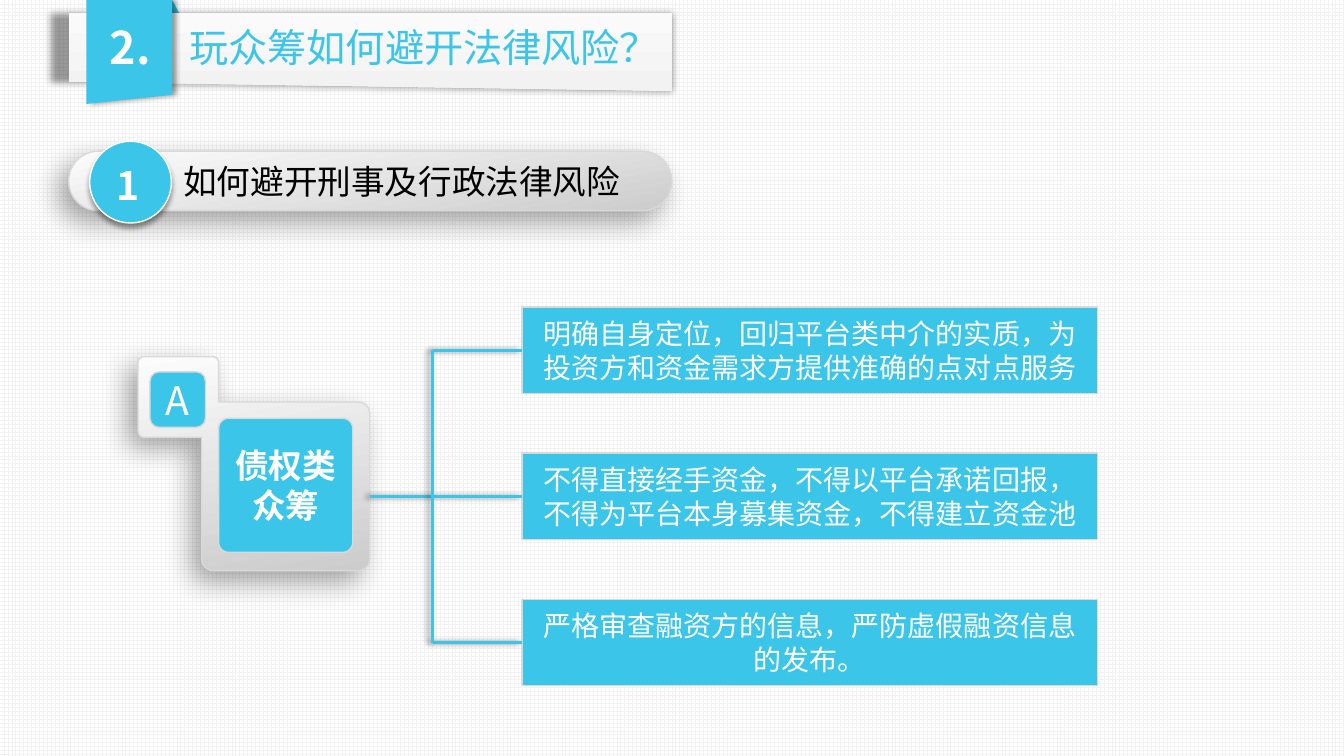
from dataclasses import dataclass
from math import cos, pi, sin

from lxml import etree
from pptx import Presentation
from pptx.dml.color import RGBColor
from pptx.enum.dml import MSO_PATTERN
from pptx.enum.shapes import MSO_CONNECTOR, MSO_SHAPE
from pptx.enum.text import MSO_ANCHOR, MSO_AUTO_SIZE, PP_ALIGN
from pptx.oxml.ns import qn
from pptx.util import Cm, Pt

RECT, ROUND = MSO_SHAPE.RECTANGLE, MSO_SHAPE.ROUNDED_RECTANGLE
OVAL, TRIANGLE = MSO_SHAPE.OVAL, MSO_SHAPE.RIGHT_TRIANGLE
STRAIGHT, GRID = MSO_CONNECTOR.STRAIGHT, MSO_PATTERN.LARGE_GRID
LEFT, CENTER = PP_ALIGN.LEFT, PP_ALIGN.CENTER
TOP, MIDDLE, NO_FIT = MSO_ANCHOR.TOP, MSO_ANCHOR.MIDDLE, MSO_AUTO_SIZE.NONE


@dataclass(frozen=True)
class Theme:
    font: str = "Noto Sans CJK SC"
    blue: str = "3BC5E9"
    white: str = "FFFFFF"
    black: str = "000000"
    grid: str = "F2F2F2"
    edge: str = "D9D9D9"
    band: tuple = ("FAFAFA", "F2F2F2", 270)
    plate: tuple = ("CCCCCC", "FCFCFC", 100)
    number: int = 32
    title: int = 28
    heading: int = 24
    body: int = 20
    band_shadow: tuple = (40, 5, 0, 0, 103)
    flag_shadow: tuple = (40, 4, 3, 0, 100)
    disc_shadow: tuple = (40, 4, 3, 90, 100)
    line_shadow: tuple = (40, 4, 3, 180, 100)
    plate_shadow: tuple = (34, 20, 10, 136, 100)


class Deck:
    """Draws themed elements on the current slide."""

    def __init__(self, theme):
        self.t = theme
        self.prs = Presentation()
        self.prs.slide_width, self.prs.slide_height = Cm(33.87), Cm(19.05)

    def slide(self):
        self.s = self.prs.slides.add_slide(self.prs.slide_layouts[5])
        fill = self.s.background.fill
        fill.patterned()
        fill.pattern = GRID
        fill.fore_color.rgb = RGBColor.from_string(self.t.grid)
        fill.back_color.rgb = RGBColor.from_string(self.t.white)

    def shadow(self, sp, shadow):
        effects = etree.SubElement(sp.element.spPr, qn("a:effectLst"))
        if shadow:
            alpha, blur, dist, angle, scale = shadow
            outer = etree.SubElement(
                effects, qn("a:outerShdw"), blurRad=str(Pt(blur)), dist=str(Pt(dist)),
                dir=str(angle * 60000), sx=str(scale * 1000), algn="r", rotWithShape="0")
            color = etree.SubElement(outer, qn("a:srgbClr"), val=self.t.black)
            etree.SubElement(color, qn("a:alpha"), val=str(alpha * 1000))

    def paint(self, sp, fill, line=None, shadow=None):
        if isinstance(fill, tuple):
            sp.fill.gradient()
            sp.fill.gradient_angle = fill[2]
            for stop, color in zip(sp.fill.gradient_stops, fill):
                stop.color.rgb = RGBColor.from_string(color)
        else:
            sp.fill.solid()
            sp.fill.fore_color.rgb = RGBColor.from_string(fill)
        if line:
            sp.line.color.rgb = RGBColor.from_string(line)
            sp.line.width = Pt(1)
        else:
            sp.line.fill.background()
        self.shadow(sp, shadow)
        return sp

    def label(self, sp, text, size, color, bold=False, align=CENTER, anchor=MIDDLE):
        tf = sp.text_frame
        tf.text = text
        tf.word_wrap = True
        tf.auto_size = NO_FIT
        tf.vertical_anchor = anchor
        p = tf.paragraphs[0]
        p.alignment = align
        r = p.runs[0]
        r.font.size, r.font.bold, r.font.name = Pt(size), bold, self.t.font
        r.font.color.rgb = RGBColor.from_string(color)
        for props in sp.element.iter(qn("a:rPr")):
            etree.SubElement(props, qn("a:ea"), typeface=self.t.font)

    def shape(self, kind, box, fill, line=None, shadow=None, radius=None):
        sp = self.s.shapes.add_shape(kind, *map(Cm, box))
        if radius is not None:
            sp.adjustments[0] = radius
        return self.paint(sp, fill, line, shadow)

    def outline(self, corners, fill, line=None, shadow=None):
        points = []
        for i, (x, y, radius) in enumerate(corners):
            steps = 8 if radius else 0
            (px, py, _), (nx, ny, _) = corners[i - 1], corners[(i + 1) % len(corners)]
            ux, uy, vx, vy = [(d > 0) - (d < 0) for d in (px - x, py - y, nx - x, ny - y)]
            for k in range(steps + 1):
                turn = pi / 2 * k / max(steps, 1)
                back, ahead = radius * (1 - sin(turn)), radius * (1 - cos(turn))
                points.append((Cm(x + ux * back + vx * ahead), Cm(y + uy * back + vy * ahead)))
        builder = self.s.shapes.build_freeform(*points[0])
        builder.add_line_segments(points[1:], close=True)
        return self.paint(builder.convert_to_shape(), fill, line, shadow)

    def text(self, box, *args, **style):
        sp = self.s.shapes.add_textbox(*map(Cm, box))
        self.label(sp, *args, anchor=TOP, **style)
        return sp

    def title(self, box, text):
        sp = self.s.shapes.title
        sp.left, sp.top, sp.width, sp.height = map(Cm, box)
        self.label(sp, text, self.t.title, self.t.blue, align=LEFT, anchor=TOP)
        sp.element.getparent().append(sp.element)

    def line(self, x1, y1, x2, y2, target=None):
        c = self.s.shapes.add_connector(STRAIGHT, x1, y1, x2, y2)
        if target:
            c.end_connect(target, 1)
        c.line.color.rgb = RGBColor.from_string(self.t.blue)
        c.line.width = Pt(2.25)
        self.shadow(c, self.t.line_shadow)

    def group(self, *shapes):
        self.s.shapes.add_group_shape(shapes)


def main():
    t = Theme()
    d = Deck(t)
    d.slide()

    d.shape(TRIANGLE, (4.34, 0, 0.18, 0.33), t.blue)
    d.outline([(16.93, 0.33, 0), (1.73, 0.33, 0), (1.73, 2.06, 0), (16.93, 2.29, 0)],
              t.band, shadow=t.band_shadow)
    d.outline([(4.34, 0, 0), (4.34, 2.39, 0), (2.18, 2.62, 0), (2.18, 0, 0)],
              t.blue, shadow=t.flag_shadow)
    d.text((2.24, 0.36, 2.08, 1.63), "2.", t.number, t.white, bold=True)
    d.title((4.52, 0.46, 12.4, 1.45), "玩众筹如何避开法律风险？")

    d.shape(ROUND, (1.73, 3.81, 15.2, 1.5), t.plate, t.edge, t.plate_shadow, 0.5)
    disc = d.shape(OVAL, (2.26, 3.56, 2.06, 2.06), t.blue, t.white, t.disc_shadow)
    d.group(disc, d.text((2.18, 3.94, 2.11, 1.45), "1", t.title, t.white, bold=True))
    d.text((4.37, 3.94, 11.53, 1.27), "如何避开刑事及行政法律风险",
           t.heading, t.black, align=LEFT)

    plate = d.outline(
        [(3.48, 8.99, 0.15), (5.51, 8.99, 0.15), (5.51, 10.13, 0), (9.32, 10.13, 0.3),
         (9.32, 14.38, 0.3), (5.08, 14.38, 0.3), (5.08, 11.02, 0), (3.48, 11.02, 0.15)],
        t.plate, t.edge, t.plate_shadow)
    name = d.shape(ROUND, (5.51, 10.54, 3.38, 3.38), t.blue, t.edge, radius=0.075)
    d.label(name, "债权类众筹", t.heading, t.white, bold=True)
    letter = d.shape(ROUND, (3.78, 9.37, 1.4, 1.4), t.blue, t.edge)
    d.label(letter, "A", t.title, t.white)
    d.group(plate, name, letter)

    rules = ["明确自身定位，回归平台类中介的实质，为投资方和资金需求方提供准确的点对点服务",
             "不得直接经手资金，不得以平台承诺回报，不得为平台本身募集资金，不得建立资金池",
             "严格审查融资方的信息，严防虚假融资信息的发布。"]
    boxes = []
    for i, rule in enumerate(rules):
        box = d.shape(RECT, (13.16, 7.74 + 3.68 * i, 14.5, 2.18), t.blue, t.edge)
        d.label(box, rule, t.body, t.white)
        boxes.append(box)

    spine, mids = Cm(10.9), [box.top + box.height // 2 for box in boxes]
    for box, mid, start in zip(boxes, mids, (spine, Cm(9.32), spine)):
        d.line(start, mid, box.left, mid, box)
    d.line(spine, mids[0], spine, mids[-1])
    d.prs.save("out.pptx")


if __name__ == "__main__":
    main()
